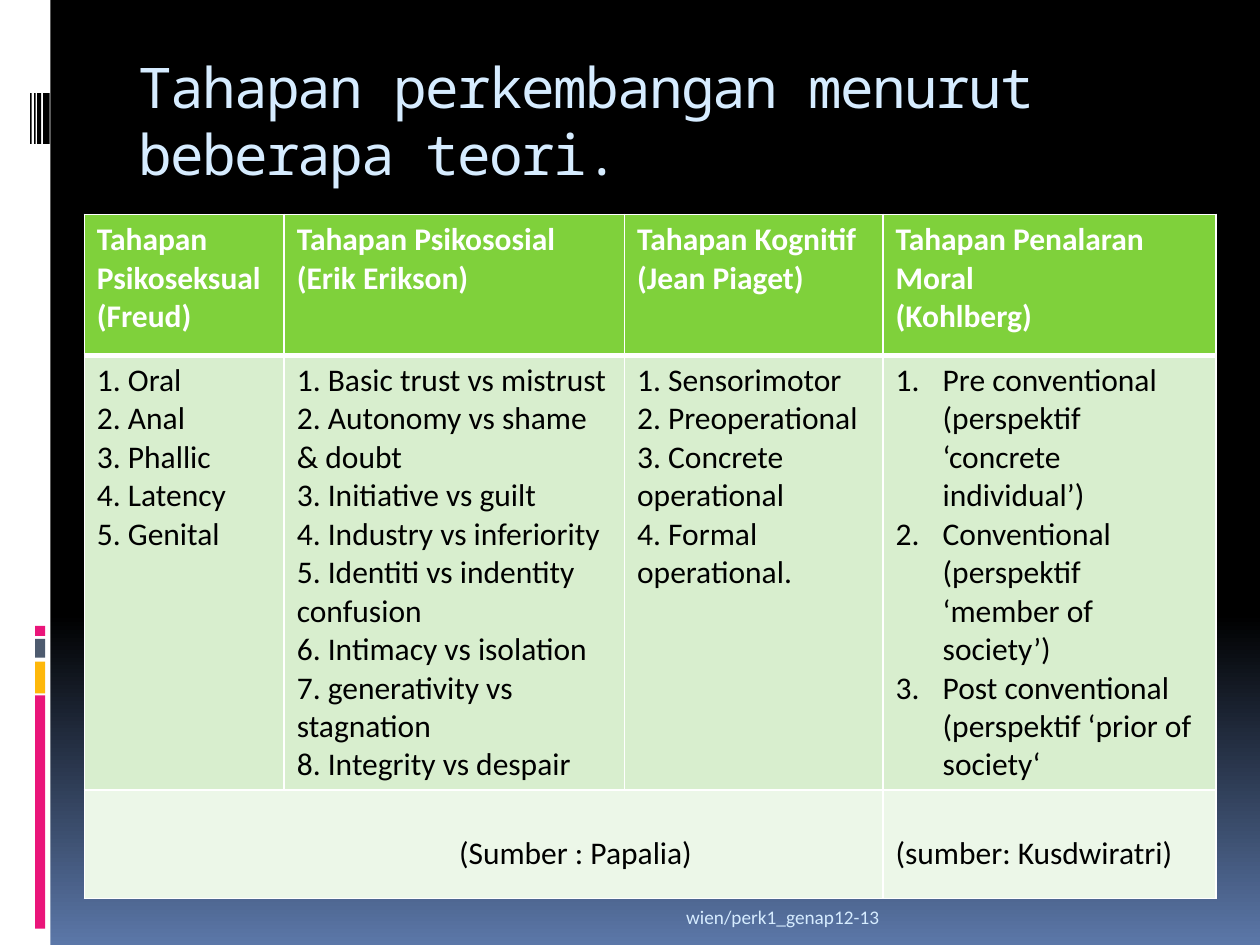
from lxml import etree
from pptx import Presentation, util as u
from pptx.dml.color import RGBColor
from pptx.enum import shapes, text
from pptx.oxml import ns

WHITE = RGBColor(0xFF, 0xFF, 0xFF)
BLACK = RGBColor(0, 0, 0)
BLUE = RGBColor(0x5B, 0x77, 0xA8)
PALE_BLUE = RGBColor(0xD6, 0xEC, 0xFF)
PINK = RGBColor(0xEA, 0x15, 0x7A)
AMBER = RGBColor(0xFE, 0xB8, 0x0A)
SLATE = RGBColor(0x4E, 0x5B, 0x6F)
GREEN = RGBColor(0x7F, 0xD1, 0x3B)
LIGHT_GREEN = RGBColor(0xD8, 0xEE, 0xCE)
PALE_GREEN = RGBColor(0xEC, 0xF7, 0xE8)

TITLE = "Tahapan perkembangan menurut beberapa teori."
FOOTER = "wien/perk1_genap12-13"
HEADINGS = [
    ["Tahapan Psikoseksual (Freud)"],
    ["Tahapan Psikososial", "(Erik Erikson)"],
    ["Tahapan Kognitif", "(Jean Piaget)"],
    ["Tahapan Penalaran Moral", "(Kohlberg)"],
]
STAGES = [
    ["1. Oral", "2. Anal", "3. Phallic", "4. Latency", "5. Genital"],
    ["1. Basic trust vs mistrust", "2. Autonomy vs shame & doubt",
     "3. Initiative vs guilt", "4. Industry vs inferiority",
     "5. Identiti vs indentity confusion", "6. Intimacy vs isolation",
     "7. generativity vs stagnation", "8. Integrity vs despair"],
    ["1. Sensorimotor", "2. Preoperational", "3. Concrete operational",
     "4. Formal operational."],
    ["Pre conventional (perspektif ‘concrete individual’)",
     "Conventional (perspektif ‘member of society’)",
     "Post conventional (perspektif ‘prior of society‘"],
]
SOURCES = [["(Sumber : Papalia)"], [], [], ["(sumber: Kusdwiratri)"]]
NUMBERED = STAGES[3]

ROWS = [
    (HEADINGS, 2.84, GREEN, {"bold": True}, WHITE, (1, 3)),
    (STAGES, 8.77, LIGHT_GREEN, {"bold": False}, BLACK, (3, 1)),
    (SOURCES, 2.18, PALE_GREEN, {"bold": False}, BLACK, (1, 1)),
]
COLUMN_WIDTHS = [4.03, 6.86, 5.21, 6.71]
TABLE_LEFT, TABLE_TOP = 1.7, 4.32

SIDE_PANEL = [(0, 0, 1.02, 19.05, WHITE)]
COLOUR_BARS = [(0.71, top, 0.2, height, colour) for top, height, colour in [
    (14.02, 4.7, PINK), (13.34, 0.64, AMBER), (12.88, 0.38, SLATE), (12.62, 0.2, PINK)]]
BARCODE = [(left, 1.88, width, 1.02, BLACK) for left, width in [
    (0.87, 0.13), (0.75, 0.08), (0.69, 0.03), (0.61, 0.03)]]


def set_format(target, values):
    for name, value in values.items():
        setattr(target, name, value)


def set_indent(para, left, first):
    props = para._p.get_or_add_pPr()
    props.set("marL", str(u.Cm(left)))
    props.set("indent", str(u.Cm(first)))
    return props


def write(frame, lines, font, colour, align=text.PP_ALIGN.LEFT, numbered=False):
    for index, line in enumerate(lines):
        para = frame.paragraphs[0] if index == 0 else frame.add_paragraph()
        para.alignment = align
        if numbered:
            props = set_indent(para, 0.95, -0.95)
            etree.SubElement(props, ns.qn("a:buFont"), typeface="+mj-lt")
            etree.SubElement(props, ns.qn("a:buAutoNum"), type="arabicPeriod")
        span = para.add_run()
        span.text = line
        set_format(span.font, font)
        span.font.color.rgb = colour


def add_text(page, place, line, font, colour, align, anchor):
    box = page.shapes.add_textbox(*map(u.Cm, place))
    set_format(box.text_frame, {"word_wrap": True, "vertical_anchor": anchor})
    write(box.text_frame, [line], font, colour, align)
    return box


def add_borders(cell, top, bottom):
    props = cell._tc.get_or_add_tcPr()
    for side, points in zip("LRTB", (1, 1, top, bottom)):
        line = etree.SubElement(props, ns.qn("a:ln" + side), w=str(u.Pt(points)))
        fill = etree.SubElement(line, ns.qn("a:solidFill"))
        etree.SubElement(fill, ns.qn("a:srgbClr"), val=str(WHITE))


def add_stage_table(page):
    heights = [row[1] for row in ROWS]
    table = page.shapes.add_table(
        len(ROWS), len(COLUMN_WIDTHS), u.Cm(TABLE_LEFT), u.Cm(TABLE_TOP),
        u.Cm(sum(COLUMN_WIDTHS)), u.Cm(sum(heights))).table
    table.horz_banding = False
    for column, width in zip(table.columns, COLUMN_WIDTHS):
        column.width = u.Cm(width)
    for r, (contents, height, fill, weight, colour, edges) in enumerate(ROWS):
        table.rows[r].height = u.Cm(height)
        for c, lines in enumerate(contents):
            cell = table.cell(r, c)
            add_borders(cell, *edges)
            cell.fill.solid()
            cell.fill.fore_color.rgb = fill
            if contents is SOURCES:
                cell.margin_top = u.Cm(0.9)
            font = {"name": "Calibri", "size": u.Pt(18), **weight}
            write(cell.text_frame, lines, font, colour, numbered=lines is NUMBERED)
    source = table.cell(2, 0)
    source.merge(table.cell(2, 2))
    set_indent(source.text_frame.paragraphs[0], 7.3, 0)


def main():
    deck = Presentation()
    set_format(deck, {"slide_width": u.Cm(25.4), "slide_height": u.Cm(19.05)})
    page = deck.slides.add_slide(deck.slide_layouts[6])

    backdrop = page.background.fill
    backdrop.gradient()
    backdrop.gradient_angle = 270
    for stop, (position, colour) in zip(backdrop.gradient_stops, [(0.65, BLACK), (1, BLUE)]):
        stop.position = position
        stop.color.rgb = colour

    for *place, colour in SIDE_PANEL + COLOUR_BARS + BARCODE:
        bar = page.shapes.add_shape(shapes.MSO_SHAPE.RECTANGLE, *map(u.Cm, place))
        bar.shadow.inherit = False
        bar.fill.solid()
        bar.fill.fore_color.rgb = colour
        bar.line.fill.background()

    add_text(page, (2.54, 17.83, 15.44, 1.02), FOOTER,
             {"name": "Calibri", "size": u.Pt(11)}, PALE_BLUE,
             text.PP_ALIGN.RIGHT, text.MSO_ANCHOR.BOTTOM)
    add_stage_table(page)
    title = add_text(page, (2.54, 0.93, 21.59, 2.54), TITLE,
                     {"name": "Noto Sans Mono", "size": u.Pt(32)}, PALE_BLUE,
                     text.PP_ALIGN.LEFT, text.MSO_ANCHOR.TOP)
    for span in title.text_frame.paragraphs[0].runs:
        span._r.get_or_add_rPr().set("spc", "-100")

    deck.save("out.pptx")


if __name__ == "__main__":
    main()
